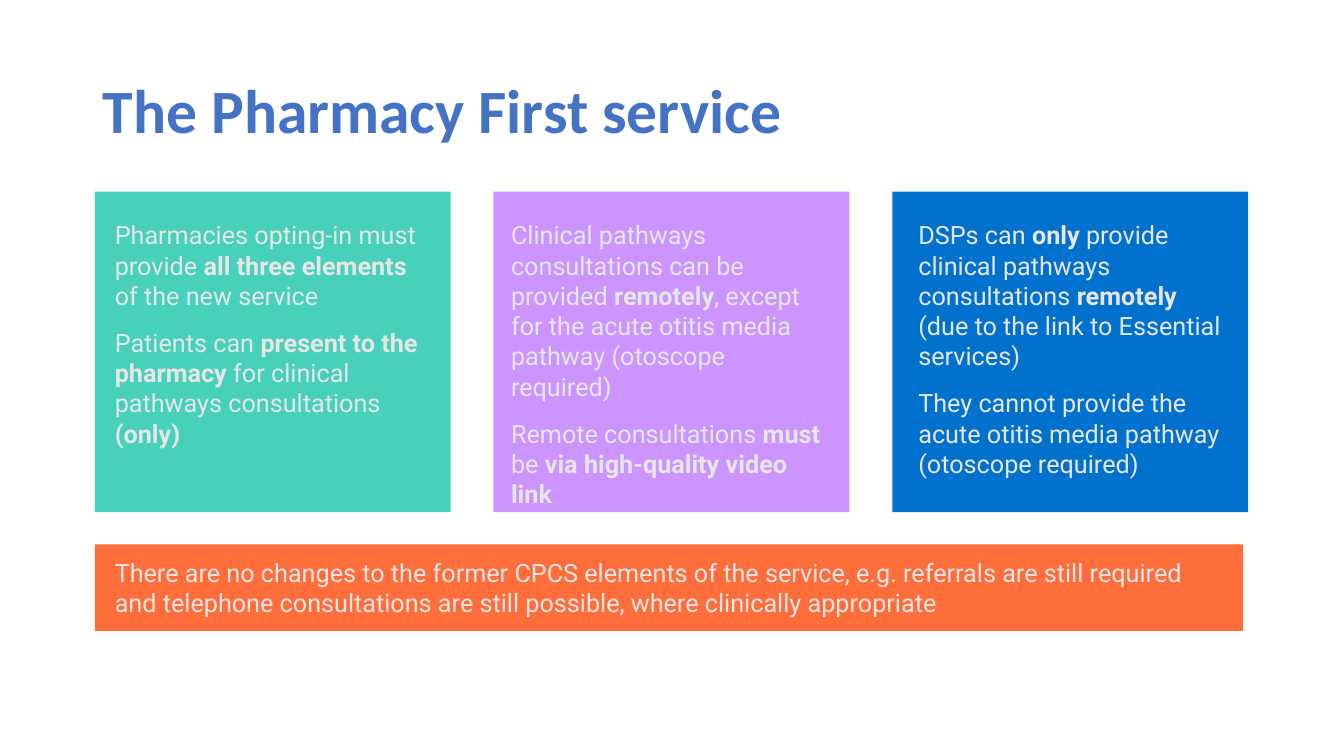
"""Build the Pharmacy First service slide."""
from dataclasses import dataclass

from pptx import Presentation
from pptx import util as u
from pptx.dml import color
from pptx.enum import shapes, text


@dataclass(frozen=True)
class Theme:
    """Colours, fonts and type sizes."""
    title_color: str = "4472C4"
    body_color: str = "E7E6E6"
    teal: str = "47D1BA"
    violet: str = "CC94FF"
    blue: str = "0072CE"
    orange: str = "FF6D3A"
    title_font: str = "Calibri"
    body_font: str = "Roboto"
    title_size: int = 44
    body_size: int = 18
    paragraph_gap: int = 12


class SlideBuilder:
    """Draw styled elements on one slide."""

    def __init__(self, page, theme):
        """Keep the slide and its style."""
        self.page = page
        self.theme = theme

    def add_span(self, para, words, font, size, hue, bold):
        """Append one formatted run."""
        span = para.add_run()
        span.text = words
        span.font.name = font
        span.font.size = u.Pt(size)
        span.font.bold = bold
        span.font.color.rgb = color.RGBColor.from_string(hue)

    def title(self, words, left, top, width, height):
        """Place and format the title placeholder."""
        box = self.page.shapes.title
        box.left, box.top = u.Inches(left), u.Inches(top)
        box.width, box.height = u.Inches(width), u.Inches(height)
        frame = box.text_frame
        frame.auto_size = text.MSO_AUTO_SIZE.NONE
        frame.vertical_anchor = text.MSO_ANCHOR.MIDDLE
        para = frame.paragraphs[0]
        para.alignment = text.PP_ALIGN.LEFT
        para.line_spacing = 0.9
        self.add_span(para, words, self.theme.title_font,
                      self.theme.title_size, self.theme.title_color, True)

    def panel(self, left, top, width, height, fill):
        """Draw a plain filled rectangle."""
        box = self.page.shapes.add_shape(
            shapes.MSO_SHAPE.RECTANGLE, u.Inches(left), u.Inches(top),
            u.Inches(width), u.Inches(height))
        box.shadow.inherit = False
        box.fill.solid()
        box.fill.fore_color.rgb = color.RGBColor.from_string(fill)
        box.line.fill.background()

    def body(self, paragraphs, left, top, width, height):
        """Write paragraphs of (words, bold) runs in a text box."""
        box = self.page.shapes.add_textbox(
            u.Inches(left), u.Inches(top), u.Inches(width), u.Inches(height))
        frame = box.text_frame
        frame.word_wrap = True
        frame.auto_size = text.MSO_AUTO_SIZE.SHAPE_TO_FIT_TEXT
        for index, runs in enumerate(paragraphs):
            para = frame.add_paragraph() if index else frame.paragraphs[0]
            if index:
                para.space_before = u.Pt(self.theme.paragraph_gap)
            for words, bold in runs:
                self.add_span(para, words, self.theme.body_font,
                              self.theme.body_size, self.theme.body_color, bold)


def main():
    """Create and save the deck."""
    theme = Theme()
    deck = Presentation()
    deck.slide_width, deck.slide_height = u.Inches(13.33), u.Inches(7.5)
    builder = SlideBuilder(deck.slides.add_slide(deck.slide_layouts[5]), theme)
    builder.title("The Pharmacy First service", 0.92, 0.4, 11.5, 1.45)

    columns = [
        (theme.teal, 1.04, 3.29, 2.73, [
            [("Pharmacies opting-in must provide ", False),
             ("all three elements", True),
             (" of the new service", False)],
            [("Patients can ", False),
             ("present to the pharmacy ", True),
             ("for clinical pathways consultations ", False),
             ("(only)", True)]]),
        (theme.violet, 4.97, 3.32, 3, [
            [("Clinical pathways consultations can be provided ", False),
             ("remotely", True),
             (", except for the acute otitis media pathway "
              "(otoscope required)", False)],
            [("Remote consultations ", False),
             ("must", True),
             (" be ", False),
             ("via high-quality video link", True)]]),
        (theme.blue, 9.01, 3.28, 3, [
            [("DSPs can ", False),
             ("only", True),
             (" provide clinical pathways consultations ", False),
             ("remotely", True),
             (" (due to the link to Essential services)", False)],
            [("They cannot provide the acute otitis media pathway "
              "(otoscope required)", False)]]),
    ]
    margin, pitch = 0.94, 3.955
    for index, (fill, left, width, height, paragraphs) in enumerate(columns):
        builder.panel(margin + index * pitch, 1.9, 3.53, 3.18, fill)
        builder.body(paragraphs, left, 2.13, width, height)

    builder.panel(margin, 5.4, 11.39, 0.86, theme.orange)
    builder.body([[(
        "There are no changes to the former CPCS elements of the service, "
        "e.g. referrals are still required and telephone consultations are "
        "still possible, where clinically appropriate", False)]],
        1.04, 5.48, 11.2, 0.71)
    deck.save("out.pptx")


if __name__ == "__main__":
    main()
